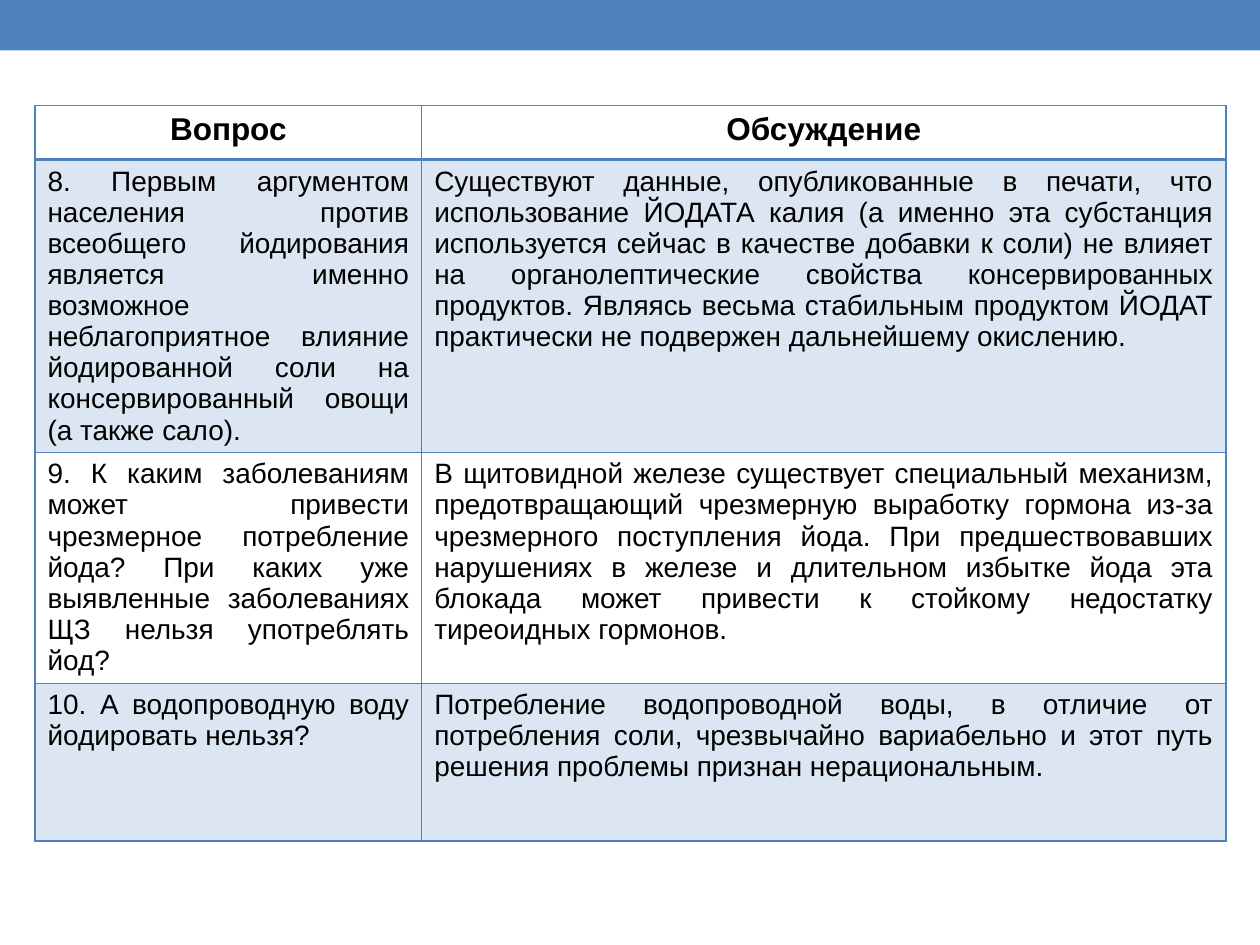
"""Build a slide with a question and discussion table about iodised salt."""
import lxml.etree
import pptx
import pptx.dml.color
import pptx.enum.shapes
import pptx.enum.text
import pptx.oxml.ns
import pptx.util

COLORS = {"blue": "4F81BD", "band": "DCE6F2", "text": "000000"}
FONT = "Arial"
HEADERS = ("Вопрос", "Обсуждение")
ANSWERS = [
    (
        "8. Первым аргументом населения против всеобщего йодирования является именно "
        "возможное неблагоприятное влияние йодированной соли на консервированный овощи "
        "(а также сало).",
        "Существуют данные, опубликованные в печати, что использование ЙОДАТА калия "
        "(а именно эта субстанция используется сейчас в качестве добавки к соли) не влияет "
        "на органолептические свойства консервированных продуктов. Являясь весьма "
        "стабильным продуктом ЙОДАТ практически не подвержен дальнейшему окислению. ",
    ),
    (
        "9. К каким заболеваниям может привести чрезмерное потребление йода? "
        "При каких уже выявленные заболеваниях ЩЗ нельзя употреблять йод?",
        "В щитовидной железе существует специальный механизм, предотвращающий чрезмерную "
        "выработку гормона из-за чрезмерного поступления йода. При предшествовавших "
        "нарушениях в железе и длительном избытке йода эта блокада может привести к "
        "стойкому недостатку тиреоидных гормонов.",
    ),
    (
        "10. А водопроводную воду йодировать нельзя?",
        "Потребление водопроводной воды, в отличие от потребления соли, чрезвычайно "
        "вариабельно и этот путь решения проблемы признан нерациональным.",
    ),
]
SLIDE_SIZE = (720, 540)
BAR_HEIGHT = 28.8
TABLE_LEFT, TABLE_TOP = 20, 60.3
COLUMN_WIDTHS = (221, 459.5)
ROW_HEIGHTS = (31, 167, 132, 90)


def color(name):
    return pptx.dml.color.RGBColor.from_string(COLORS[name])


def set_borders(cell, bottom_width):
    properties = cell._tc.get_or_add_tcPr()
    widths = {"lnL": 1, "lnR": 1, "lnT": 1, "lnB": bottom_width}
    for position, (tag, width) in enumerate(widths.items()):
        line = lxml.etree.Element(pptx.oxml.ns.qn(f"a:{tag}"), w=str(pptx.util.Pt(width)))
        fill = lxml.etree.SubElement(line, pptx.oxml.ns.qn("a:solidFill"))
        lxml.etree.SubElement(fill, pptx.oxml.ns.qn("a:srgbClr"), val=COLORS["blue"])
        properties.insert(position, line)


def fill_cell(cell, text, is_header, is_banded):
    if is_banded:
        cell.fill.solid()
        cell.fill.fore_color.rgb = color("band")
    else:
        cell.fill.background()
    set_borders(cell, 2 if is_header else 1)
    paragraph = cell.text_frame.paragraphs[0]
    alignments = pptx.enum.text.PP_ALIGN
    paragraph.alignment = alignments.CENTER if is_header else alignments.JUSTIFY
    run = paragraph.add_run()
    run.text = text
    run.font.name = FONT
    run.font.size = pptx.util.Pt(18 if is_header else 16)
    run.font.bold = is_header
    run.font.color.rgb = color("text")


def add_bar(slide):
    bar = slide.shapes.add_shape(
        pptx.enum.shapes.MSO_SHAPE.RECTANGLE,
        0, 0, pptx.util.Pt(SLIDE_SIZE[0]), pptx.util.Pt(BAR_HEIGHT),
    )
    bar.shadow.inherit = False
    bar.fill.solid()
    bar.fill.fore_color.rgb = color("blue")
    bar.line.fill.background()


def add_discussion_table(slide):
    rows = [HEADERS, *ANSWERS]
    box = (TABLE_LEFT, TABLE_TOP, sum(COLUMN_WIDTHS), sum(ROW_HEIGHTS))
    table = slide.shapes.add_table(
        len(rows), len(HEADERS), *map(pptx.util.Pt, box)
    ).table
    for column, width in zip(table.columns, COLUMN_WIDTHS):
        column.width = pptx.util.Pt(width)
    for index, (row, height, texts) in enumerate(zip(table.rows, ROW_HEIGHTS, rows)):
        row.height = pptx.util.Pt(height)
        for cell, text in zip(row.cells, texts):
            fill_cell(cell, text, index == 0, index % 2 == 1)


def main():
    presentation = pptx.Presentation()
    presentation.slide_width, presentation.slide_height = map(pptx.util.Pt, SLIDE_SIZE)
    slide = presentation.slides.add_slide(presentation.slide_layouts[6])
    add_bar(slide)
    add_discussion_table(slide)
    presentation.save("out.pptx")


if __name__ == "__main__":
    main()
